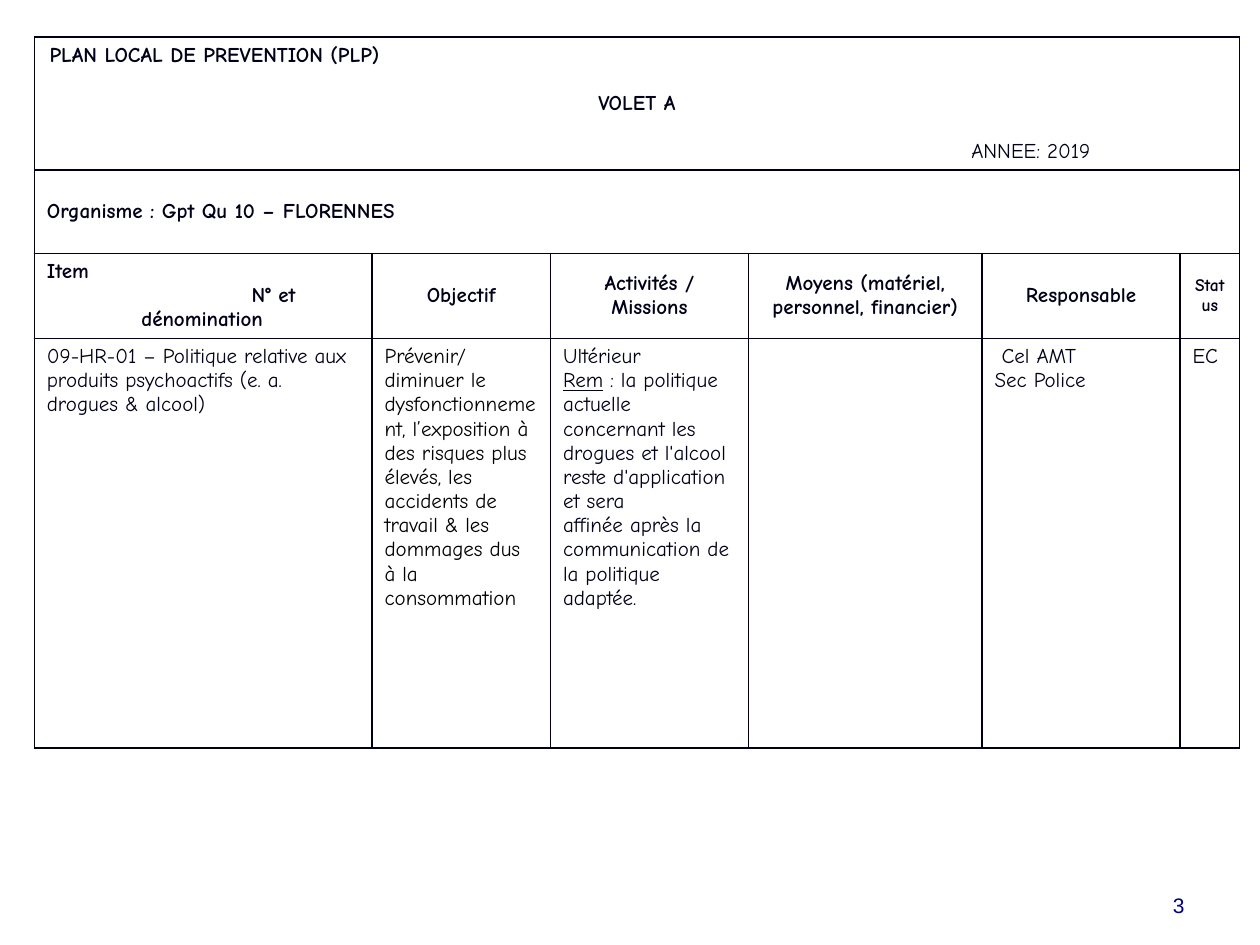
from lxml.etree import SubElement
from pptx import Presentation
from pptx.dml.color import RGBColor
from pptx.enum.text import MSO_ANCHOR, PP_ALIGN
from pptx.oxml.ns import qn
from pptx.util import Pt

INK = RGBColor(0x00, 0x00, 0x18)
BLACK = RGBColor(0x00, 0x00, 0x00)
NAVY = RGBColor(0x00, 0x00, 0x80)
FONT = "Comic Neue"
LEFT, MID, RIGHT = PP_ALIGN.LEFT, PP_ALIGN.CENTER, PP_ALIGN.RIGHT


def write(frame, text, size=12, color=INK, font=FONT, bold=False, under=False,
          align=LEFT, left=0, right=0, first=0, before=0, join=False):
    """Add a paragraph, or with join a run to the last one."""
    para = frame.paragraphs[-1]
    if para.runs and not join:
        para = frame.add_paragraph()
    if not join:
        para.alignment = align
        para.space_before = Pt(before)
        props = para._p.get_or_add_pPr()
        for key, val in (("marL", left), ("marR", right), ("indent", first)):
            props.set(key, str(Pt(val)))
    run = para.add_run()
    run.text = text
    run.font.size = Pt(size)
    run.font.name = font
    run.font.bold = bold
    run.font.underline = under
    run.font.color.rgb = color


def frame_cell(cell):
    """Draw the four borders and clear the fill."""
    props = cell._tc.get_or_add_tcPr()
    for side in ("lnL", "lnR", "lnT", "lnB"):
        line = SubElement(props, qn("a:" + side), w=str(Pt(1)))
        fill = SubElement(line, qn("a:solidFill"))
        SubElement(fill, qn("a:srgbClr"), val=str(INK))
    cell.fill.background()


prs = Presentation()
prs.slide_width, prs.slide_height = Pt(720), Pt(540)
slide = prs.slides.add_slide(prs.slide_layouts[6])

# Table grid
widths = [193, 102, 113.2, 133.4, 113.2, 34]
heights = [73.5, 47.5, 47.5, 234]
table = slide.shapes.add_table(len(heights), len(widths), Pt(19.6), Pt(21),
                               Pt(sum(widths)), Pt(sum(heights))).table
table.first_row = table.horz_banding = False
for col, width in zip(table.columns, widths):
    col.width = Pt(width)
for row, height in zip(table.rows, heights):
    row.height = Pt(height)
for cell in table.iter_cells():
    frame_cell(cell)
for r in range(2):
    table.cell(r, 0).merge(table.cell(r, len(widths) - 1))
for r in range(3):
    for cell in table.rows[r].cells:
        cell.vertical_anchor = MSO_ANCHOR.MIDDLE

# Title rows
title = table.cell(0, 0).text_frame
write(title, "PLAN LOCAL DE PREVENTION (PLP)", bold=True, left=1.5)
write(title, "VOLET A", bold=True, align=MID, before=13.8)
write(title, "ANNEE: 2019", align=RIGHT, right=78, before=13.8)
write(table.cell(1, 0).text_frame, "Organisme : Gpt Qu 10 – FLORENNES", bold=True)

# Column heads
item = table.cell(2, 0).text_frame
write(item, "Item", bold=True)
write(item, "N° et dénomination", bold=True, left=54, first=63)
heads = ["Objectif", "Activités / Missions",
         "Moyens (matériel, personnel, financier)", "Responsable", "Status"]
for c, head in enumerate(heads, 1):
    write(table.cell(2, c).text_frame, head, bold=True, align=MID,
          size=10 if head == "Status" else 12)

# Entry
name, goal, task, means, lead, state = [c.text_frame for c in table.rows[3].cells]
write(name, "09-HR-01 – Politique relative aux produits psychoactifs "
            "(e. a. drogues & alcool)")
write(goal, "Prévenir/diminuer le dysfonctionnement, l’exposition à des risques "
            "plus élevés, les accidents de travail & les dommages dus à la "
            "consommation", color=BLACK)
write(task, "Ultérieur")
write(task, "Rem", under=True)
write(task, " : la politique actuelle concernant les drogues et l'alcool reste "
            "d'application et sera", join=True)
write(task, "affinée après la communication de la politique adaptée.")
write(lead, "Cel AMT", left=4)
write(lead, "Sec Police")
write(state, "EC")

# Page number
page = slide.shapes.add_textbox(Pt(516), Pt(492), Pt(168), Pt(36)).text_frame
page.word_wrap = True
page.vertical_anchor = MSO_ANCHOR.BOTTOM
write(page, "3", font="Arial", color=NAVY, align=RIGHT)

prs.save("out.pptx")
